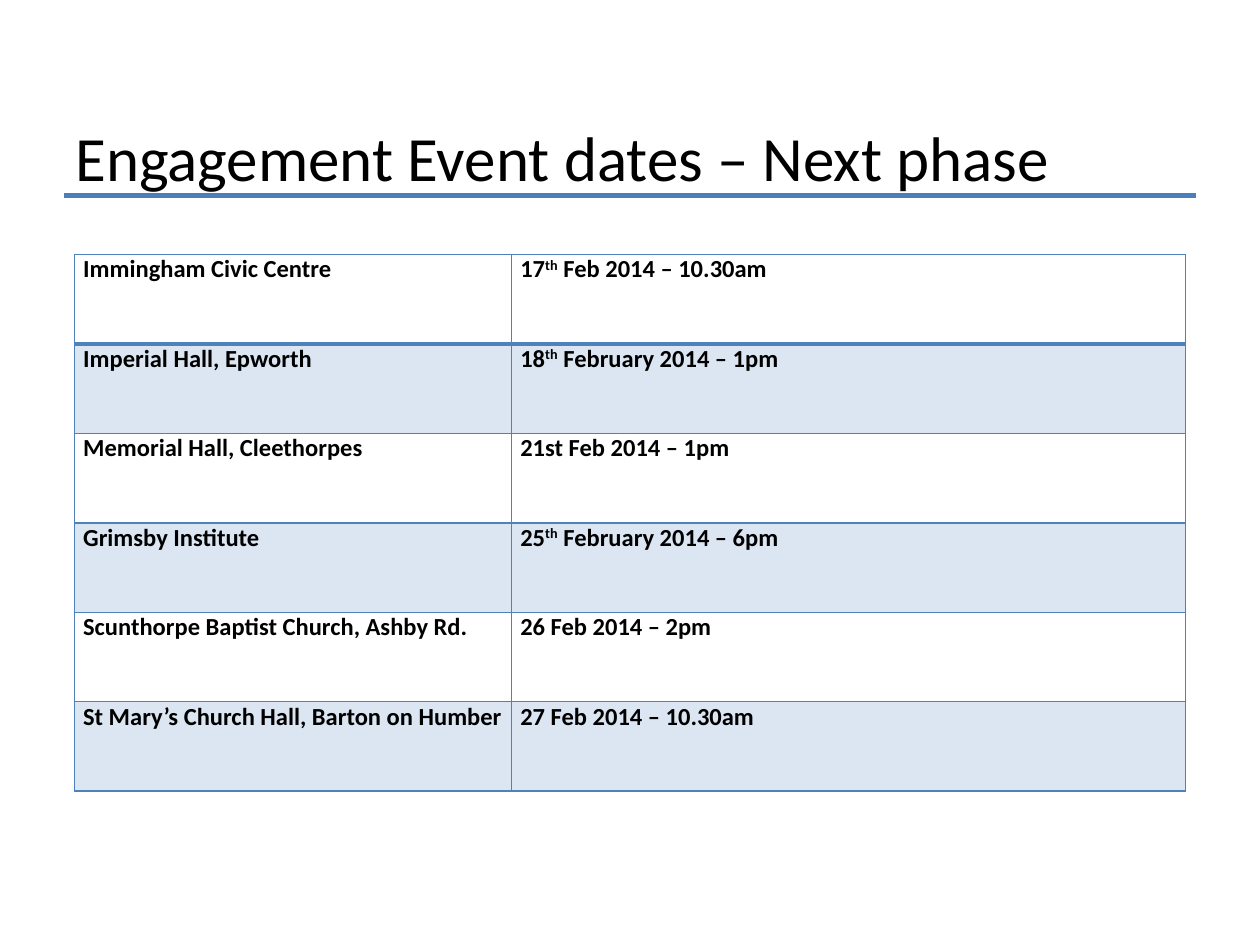
from lxml.etree import SubElement as Sub
from pptx import Presentation
from pptx.dml.color import RGBColor as RGB
from pptx.enum.shapes import MSO_CONNECTOR as Conn
from pptx.enum.text import MSO_ANCHOR as Anchor
from pptx.oxml.ns import qn
from pptx.util import Inches, Pt

# Content: ^ marks the start and end of raised text
TITLE = "Engagement Event dates – Next phase"
EVENTS = [
    ("Immingham Civic Centre", "17^th^ Feb 2014 – 10.30am"),
    ("Imperial Hall, Epworth", "18^th^ February 2014 – 1pm"),
    ("Memorial Hall, Cleethorpes", "21st\u00a0Feb 2014 – 1pm"),
    ("Grimsby Institute", "25^th^ February 2014 – 6pm"),
    ("Scunthorpe Baptist Church, Ashby Rd.", "26 Feb 2014 – 2pm"),
    ("St Mary’s Church Hall, Barton on Humber", "27 Feb 2014 – 10.30am"),
]
COLORS = {"text": "000000", "rule": "4B7EBC", "edge": "4F81BD",
          "band": "DCE6F2", "plain": "FFFFFF"}
FONT = "Calibri"
COLS = (3.47, 5.35)
ROW = 0.71


def color(name):
    return RGB.from_string(COLORS[name])


def write(frame, text, size=14, bold=False, anchor=Anchor.TOP):
    frame.word_wrap = True
    frame.vertical_anchor = anchor
    for i, part in enumerate(text.split("^")):
        run = frame.paragraphs[0].add_run()
        run.text = part
        font = run.font
        font.name, font.size, font.bold = FONT, Pt(size), bold
        font.color.rgb = color("text")
        if i % 2:
            run._r.get_or_add_rPr().set("baseline", "30000")


def edge(cell, side, width):
    line = Sub(cell._tc.get_or_add_tcPr(), qn("a:ln" + side), w=str(Pt(width)))
    fill = Sub(line, qn("a:solidFill"))
    Sub(fill, qn("a:srgbClr"), val=COLORS["edge"])


prs = Presentation()
prs.slide_width, prs.slide_height = Inches(10), Inches(7.5)
slide = prs.slides.add_slide(prs.slide_layouts[6])
shapes = slide.shapes

# Rule under the title
rule = shapes.add_connector(Conn.STRAIGHT, Inches(0.51), Inches(1.55),
                            Inches(9.49), Inches(1.55))
rule.line.color.rgb = color("rule")
rule.line.width = Pt(3)
Sub(rule._element.spPr, qn("a:effectLst"))

# Title
box = shapes.add_textbox(Inches(0.5), Inches(0.92), Inches(9), Inches(0.64))
write(box.text_frame, TITLE, size=36, anchor=Anchor.MIDDLE)

# Event table
table = shapes.add_table(len(EVENTS), len(COLS), Inches(0.59), Inches(2.02),
                         Inches(sum(COLS)), Inches(ROW * len(EVENTS))).table
table.first_row = table.horz_banding = False
for col, width in zip(table.columns, COLS):
    col.width = Inches(width)
for r, event in enumerate(EVENTS):
    table.rows[r].height = Inches(ROW)
    for c, text in enumerate(event):
        cell = table.cell(r, c)
        cell.margin_left = cell.margin_right = Inches(0.07)
        cell.margin_top = cell.margin_bottom = 0
        write(cell.text_frame, text, bold=True)
        # The line between the first two rows is thicker
        for side in "LRTB":
            thick = (r, side) in ((0, "B"), (1, "T"))
            edge(cell, side, 2 if thick else 1)
        cell.fill.solid()
        cell.fill.fore_color.rgb = color("band" if r % 2 else "plain")

prs.save("out.pptx")
